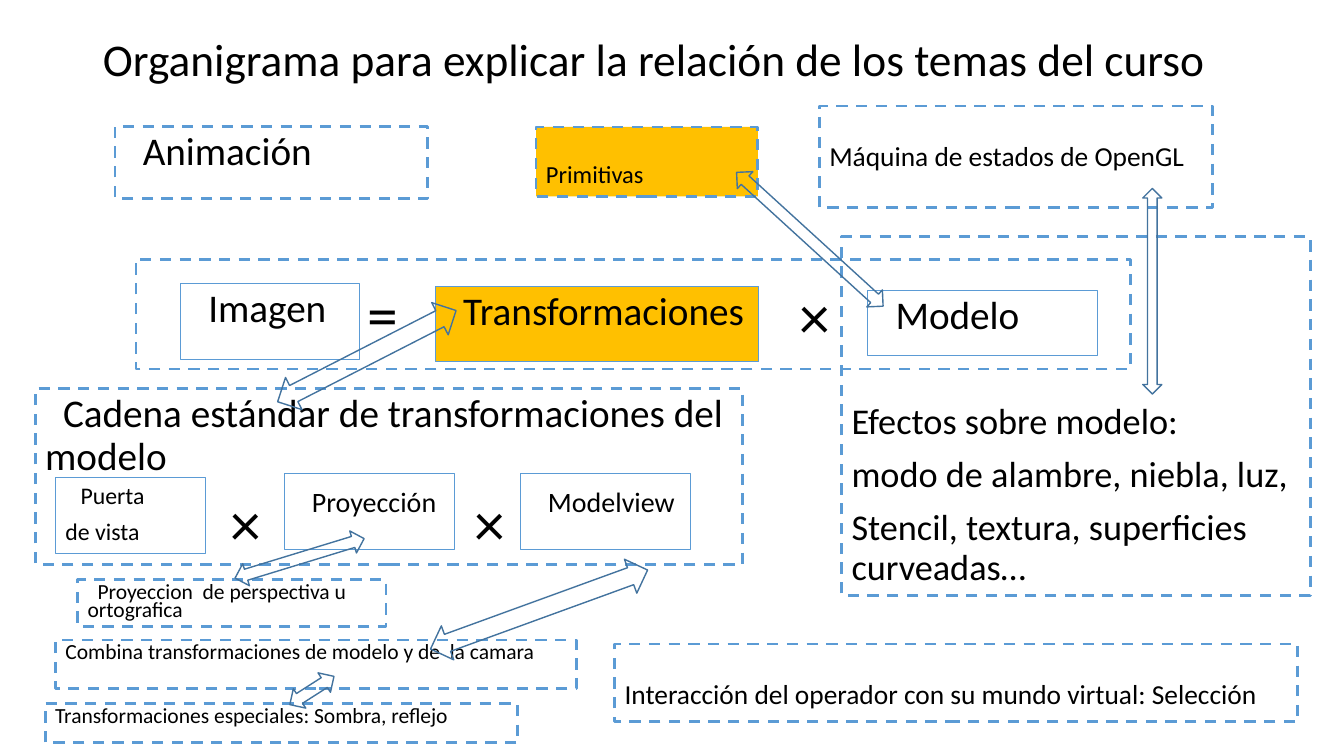
from lxml.etree import SubElement
from pptx import Presentation
from pptx.dml.color import RGBColor
from pptx.enum.dml import MSO_LINE
from pptx.enum.shapes import MSO_SHAPE
from pptx.enum.text import MSO_ANCHOR, MSO_AUTO_SIZE, PP_ALIGN
from pptx.oxml.ns import qn
from pptx.util import Cm, Pt

COLORS = {"bg": "FFFFFF", "text": "000000", "box": "5B9BD5",
          "gold": "FFC000", "arrow": "43739E"}


def color(name):
    return RGBColor.from_string(COLORS[name])


def write(sp, text, size=28, spacing=0.9, before=10, indent=0, top=0.13,
          anchor=MSO_ANCHOR.TOP):
    tf = sp.text_frame
    tf.word_wrap = True
    tf.auto_size = MSO_AUTO_SIZE.NONE
    tf.vertical_anchor = anchor
    tf.margin_top = Cm(top)
    for i, line in enumerate(text.split("\n")):
        p = tf.add_paragraph() if i else tf.paragraphs[0]
        p.alignment = PP_ALIGN.LEFT
        p.line_spacing = spacing
        p.space_before = Pt(before if i else 0)
        pPr = p._p.get_or_add_pPr()
        pPr.set("marL", "0")
        pPr.set("indent", str(0 if i else Cm(indent)))
        SubElement(pPr, qn("a:buNone"))
        r = p.add_run()
        r.text = line
        r.font.size = Pt(size)
        r.font.name = "Calibri"
        r.font.color.rgb = color("text")


prs = Presentation()
prs.slide_width, prs.slide_height = Cm(33.87), Cm(19.05)
s = prs.slides.add_slide(prs.slide_layouts[1])
s.background.fill.solid()
s.background.fill.fore_color.rgb = color("bg")

title = s.shapes.title
title.left, title.top, title.width, title.height = Cm(2.34), Cm(0.25), Cm(29.21), Cm(2.62)
write(title, "Organigrama para explicar la relación de los temas del curso",
      size=32.4, anchor=MSO_ANCHOR.MIDDLE)

body = s.placeholders[1]
body.left, body.top, body.width, body.height = Cm(10.97), Cm(7.21), Cm(8.15), Cm(1.91)
body.fill.solid()
body.fill.fore_color.rgb = color("gold")
body.line.color.rgb = color("box")
body.line.width = Pt(0.75)
write(body, "Transformaciones", indent=0.45)

step = dict(size=20, indent=0.45, top=0.36)
note = dict(size=15.4, spacing=0.7)
topic = dict(size=19.6, spacing=0.7, top=1.07)
boxes = [
    ("Modelo", 21.87, 7.32, 5.79, 1.63, False, None, dict(indent=0.45)),
    ("Imagen", 4.55, 7.14, 4.5, 1.91, False, None, dict(indent=0.45)),
    ("Animación", 2.9, 3.18, 7.87, 1.83, True, None, dict(indent=0.45)),
    ("Cadena estándar de transformaciones del modelo",
     0.89, 9.8, 17.83, 4.42, True, None, dict(indent=0.45)),
    ("Puerta\nde vista", 1.4, 12.04, 3.78, 1.91, False, None,
     dict(size=17, spacing=0.7, before=11.8, indent=0.38, top=0.27)),
    ("Proyección", 7.16, 11.94, 4.29, 1.91, False, None, step),
    ("Modelview", 13.11, 11.94, 4.29, 1.91, False, None, step),
    ("Efectos sobre modelo:\nmodo de alambre, niebla, luz,\n"
     "Stencil, textura, superficies curveadas…",
     21.21, 5.97, 11.81, 9.04, True, None, dict(size=25.9, top=4.19)),
    ("Interacción del operador con su mundo virtual: Selección",
     15.49, 16.23, 17.22, 1.96, True, None, topic),
    ("Combina transformaciones de modelo y de  la camara",
     1.4, 16.13, 13.13, 1.22, True, None, note),
    ("Proyeccion  de perspectiva u ortografica",
     1.96, 14.61, 7.77, 1.17, True, None, dict(note, indent=0.25)),
    ("Primitivas", 13.51, 3.2, 5.59, 1.75, True, "gold",
     dict(size=17.5, spacing=0.7, top=1.01)),
    ("Máquina de estados de OpenGL", 20.65, 2.67, 9.91, 2.57, True, None, topic),
    ("Transformaciones especiales: Sombra, reflejo",
     1.14, 17.73, 11.91, 0.99, True, None, note),
    ("", 3.43, 6.53, 25.07, 2.77, True, None, {}),
]
for text, x, y, w, h, dashed, fill, style in boxes:
    sp = s.shapes.add_shape(MSO_SHAPE.RECTANGLE, Cm(x), Cm(y), Cm(w), Cm(h))
    sp.shadow.inherit = False
    sp.fill.background()
    if fill:
        sp.fill.solid()
        sp.fill.fore_color.rgb = color(fill)
    sp.line.color.rgb = color("box")
    sp.line.width = Pt(2 if dashed else 0.75)
    if dashed:
        sp.line.dash_style = MSO_LINE.DASH
    if text:
        write(sp, text, **style)

for sign, x, y in [("×", 19.89, 7.09), ("=", 9.02, 7.04),
                   ("×", 11.71, 12.29), ("×", 5.56, 12.29)]:
    write(s.shapes.add_textbox(Cm(x), Cm(y), Cm(1.35), Cm(2.08)), sign, size=44)

arrows = [
    (8.79, 6.45, 0.91, 5.05, 62.9, 0.265),
    (13.13, 12.45, 0.91, 5.82, 70, 0.265),
    (7.26, 12.37, 0.58, 3.4, 73, 0.265),
    (20.12, 3.53, 0.58, 5, 312.4, 0.265),
    (28.8, 4.75, 0.48, 5.18, 0, 0.655),
    (7.57, 16.74, 0.58, 1.32, 57.4, 0.265),
]
for x, y, w, h, angle, shaft in arrows:
    sp = s.shapes.add_shape(MSO_SHAPE.UP_DOWN_ARROW, Cm(x), Cm(y), Cm(w), Cm(h))
    sp.shadow.inherit = False
    sp.rotation = angle
    sp.adjustments[0] = shaft
    sp.adjustments[1] = 0.5
    sp.fill.background()
    sp.line.color.rgb = color("arrow")
    sp.line.width = Pt(1)

prs.save("out.pptx")
